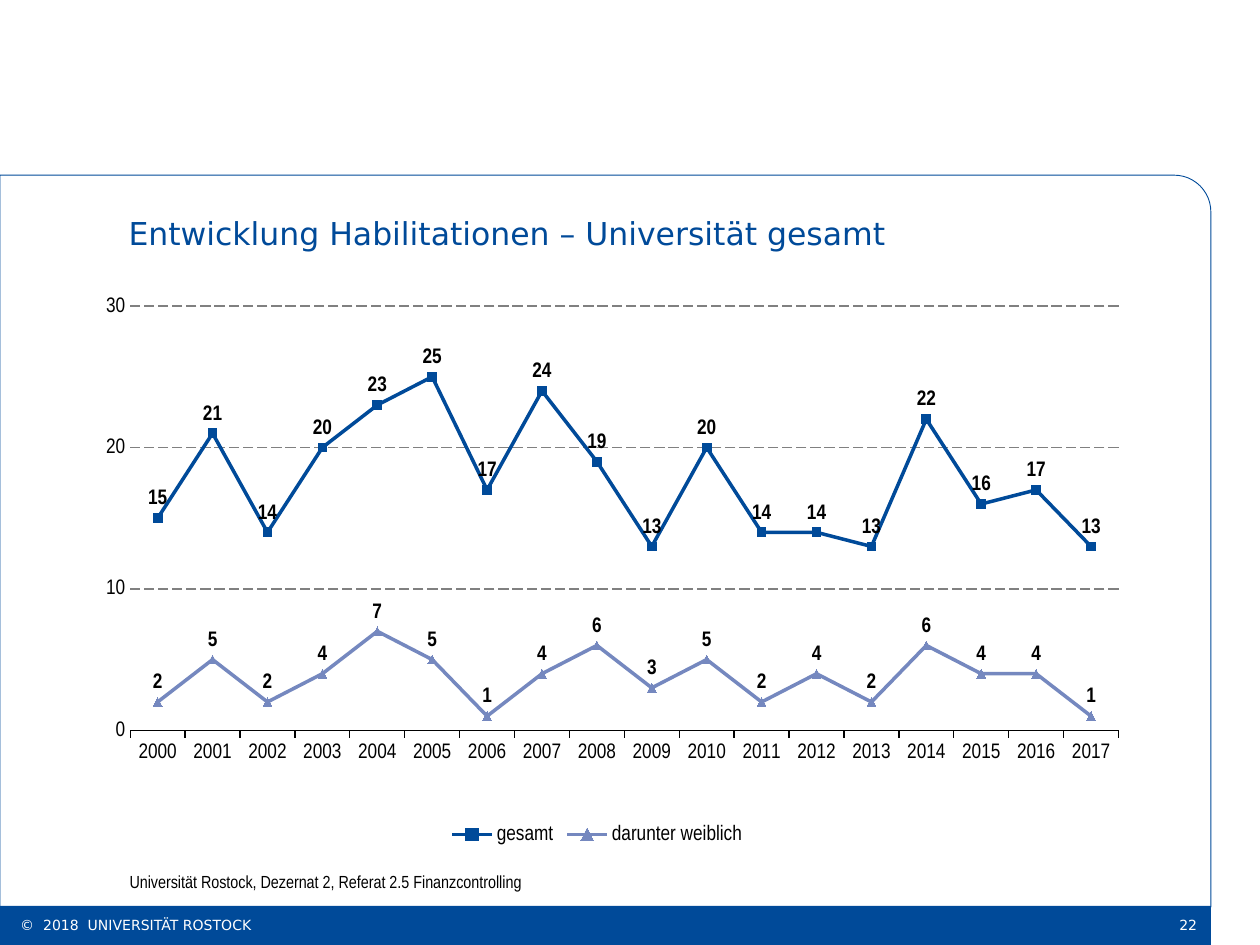
from lxml import etree
from pptx import Presentation
from pptx.chart.data import CategoryChartData
from pptx.dml.color import RGBColor
from pptx.enum.chart import (XL_CHART_TYPE, XL_LABEL_POSITION, XL_LEGEND_POSITION,
                             XL_MARKER_STYLE, XL_TICK_MARK)
from pptx.enum.dml import MSO_LINE
from pptx.enum.shapes import MSO_SHAPE
from pptx.enum.text import MSO_ANCHOR, PP_ALIGN
from pptx.oxml.ns import qn
from pptx.util import Inches, Pt

# Content
TITLE = "Entwicklung Habilitationen – Universität gesamt"
SOURCE = "Universität Rostock, Dezernat 2, Referat 2.5 Finanzcontrolling"
FOOTER = "©  2018  UNIVERSITÄT ROSTOCK"
PAGE_NUMBER = "22"
YEARS = [str(year) for year in range(2000, 2018)]
SERIES = [
    ("gesamt", "blue", XL_MARKER_STYLE.SQUARE,
     [15, 21, 14, 20, 23, 25, 17, 24, 19, 13, 20, 14, 14, 13, 22, 16, 17, 13]),
    ("darunter weiblich", "light_blue", XL_MARKER_STYLE.TRIANGLE,
     [2, 5, 2, 4, 7, 5, 1, 4, 6, 3, 5, 2, 4, 2, 6, 4, 4, 1]),
]
PLOT_AREA = {"x": 0.07, "y": 0.04, "w": 0.91, "h": 0.75}


class Theme:
    blue = RGBColor(0x00, 0x4A, 0x99)
    light_blue = RGBColor(0x75, 0x88, 0xBF)
    grey = RGBColor(0x80, 0x80, 0x80)
    black = RGBColor(0, 0, 0)
    white = RGBColor(0xFF, 0xFF, 0xFF)
    heading_font = "DejaVu Sans"
    body_font = "Arial Narrow"
    title_size, chart_size, source_size, footer_size = Pt(18), Pt(12), Pt(10), Pt(8)


def add_text(page, text, area, font, size, color, left_inset=0.1, bottom_inset=0.05,
             anchor=MSO_ANCHOR.MIDDLE, align=PP_ALIGN.LEFT):
    frame = page.shapes.add_textbox(*map(Inches, area)).text_frame
    frame.word_wrap = True
    frame.vertical_anchor = anchor
    frame.margin_left, frame.margin_bottom = Inches(left_inset), Inches(bottom_inset)
    para = frame.paragraphs[0]
    para.text, para.alignment = text, align
    para.font.name, para.font.size, para.font.color.rgb = font, size, color


def add_panels(page):
    bar = page.shapes.add_shape(MSO_SHAPE.RECTANGLE, *map(Inches, (0, 7.19, 9.61, 0.31)))
    bar.fill.solid()
    bar.fill.fore_color.rgb = Theme.blue
    bar.line.fill.background()
    frame = page.shapes.add_shape(MSO_SHAPE.ROUND_1_RECTANGLE,
                                  *map(Inches, (0, 1.39, 9.61, 5.81)))
    frame.adjustments[0] = 0.05
    frame.fill.background()
    frame.line.color.rgb, frame.line.width = Theme.blue, Pt(0.5)
    for shape in (bar, frame):
        shape.shadow.inherit = False


def place_plot(chart):
    plot_area = chart._chartSpace.chart.plotArea
    for old in plot_area.findall(qn("c:layout")):
        plot_area.remove(old)
    layout = etree.Element(qn("c:layout"))
    manual = etree.SubElement(layout, qn("c:manualLayout"))
    settings = {"layoutTarget": "inner", "xMode": "edge", "yMode": "edge", **PLOT_AREA}
    for name, value in settings.items():
        etree.SubElement(manual, qn(f"c:{name}")).set("val", str(value))
    plot_area.insert(0, layout)


def style_axes(chart):
    years, counts = chart.category_axis, chart.value_axis
    for axis in (years, counts):
        axis.tick_labels.font.size = Theme.chart_size
        axis.minor_tick_mark = XL_TICK_MARK.NONE
    years.major_tick_mark = XL_TICK_MARK.OUTSIDE
    years.format.line.color.rgb, years.format.line.width = Theme.black, Pt(0.75)
    counts.major_tick_mark = XL_TICK_MARK.NONE
    counts.format.line.fill.background()
    counts.minimum_scale, counts.maximum_scale, counts.major_unit = 0, 30, 10
    grid = counts.major_gridlines.format.line
    grid.color.rgb, grid.width, grid.dash_style = Theme.grey, Pt(0.75), MSO_LINE.LONG_DASH


def style_series(series, color, marker_style):
    series.smooth = False
    series.format.line.color.rgb, series.format.line.width = color, Pt(2)
    marker = series.marker
    marker.style, marker.size = marker_style, 5
    marker.format.fill.solid()
    marker.format.fill.fore_color.rgb = color
    marker.format.line.color.rgb = color
    labels = series.data_labels
    labels.show_value, labels.position = True, XL_LABEL_POSITION.ABOVE
    labels.font.size, labels.font.bold = Theme.chart_size, True


def add_line_chart(page):
    data = CategoryChartData()
    data.categories = YEARS
    for name, _, _, values in SERIES:
        data.add_series(name, values)
    chart = page.shapes.add_chart(XL_CHART_TYPE.LINE_MARKERS,
                                  *map(Inches, (0.43, 2.25, 8.62, 4.49)), data).chart
    chart.has_title = False
    chart.font.name, chart.font.size = Theme.body_font, Theme.chart_size
    chart.font.color.rgb = Theme.black
    chart.has_legend = True
    chart.legend.position = XL_LEGEND_POSITION.BOTTOM
    chart.legend.include_in_layout = False
    chart.legend.font.size = Theme.chart_size
    chart.plots[0].vary_by_categories = False
    place_plot(chart)
    style_axes(chart)
    for series, (_, color, marker_style, _) in zip(chart.plots[0].series, SERIES):
        style_series(series, getattr(Theme, color), marker_style)


def main():
    deck = Presentation()
    deck.slide_width, deck.slide_height = Inches(10), Inches(7.5)
    page = deck.slides.add_slide(deck.slide_layouts[6])

    # Frame and footer bar
    add_panels(page)

    # Title, raised above the middle of its box
    add_text(page, TITLE, (1.02, 1.62, 8.29, 0.74), Theme.heading_font,
             Theme.title_size, Theme.blue, left_inset=0, bottom_inset=0.34)

    # Footer
    footer_style = (Theme.heading_font, Theme.footer_size, Theme.white)
    add_text(page, PAGE_NUMBER, (8.83, 7.18, 0.77, 0.32), *footer_style,
             align=PP_ALIGN.RIGHT)
    add_text(page, FOOTER, (0.16, 7.18, 8.48, 0.32), *footer_style, left_inset=0)

    # Chart and its source
    add_line_chart(page)
    add_text(page, SOURCE, (0.93, 6.86, 3.64, 0.27), Theme.body_font,
             Theme.source_size, Theme.black, anchor=MSO_ANCHOR.TOP)

    deck.save("out.pptx")


if __name__ == "__main__":
    main()
